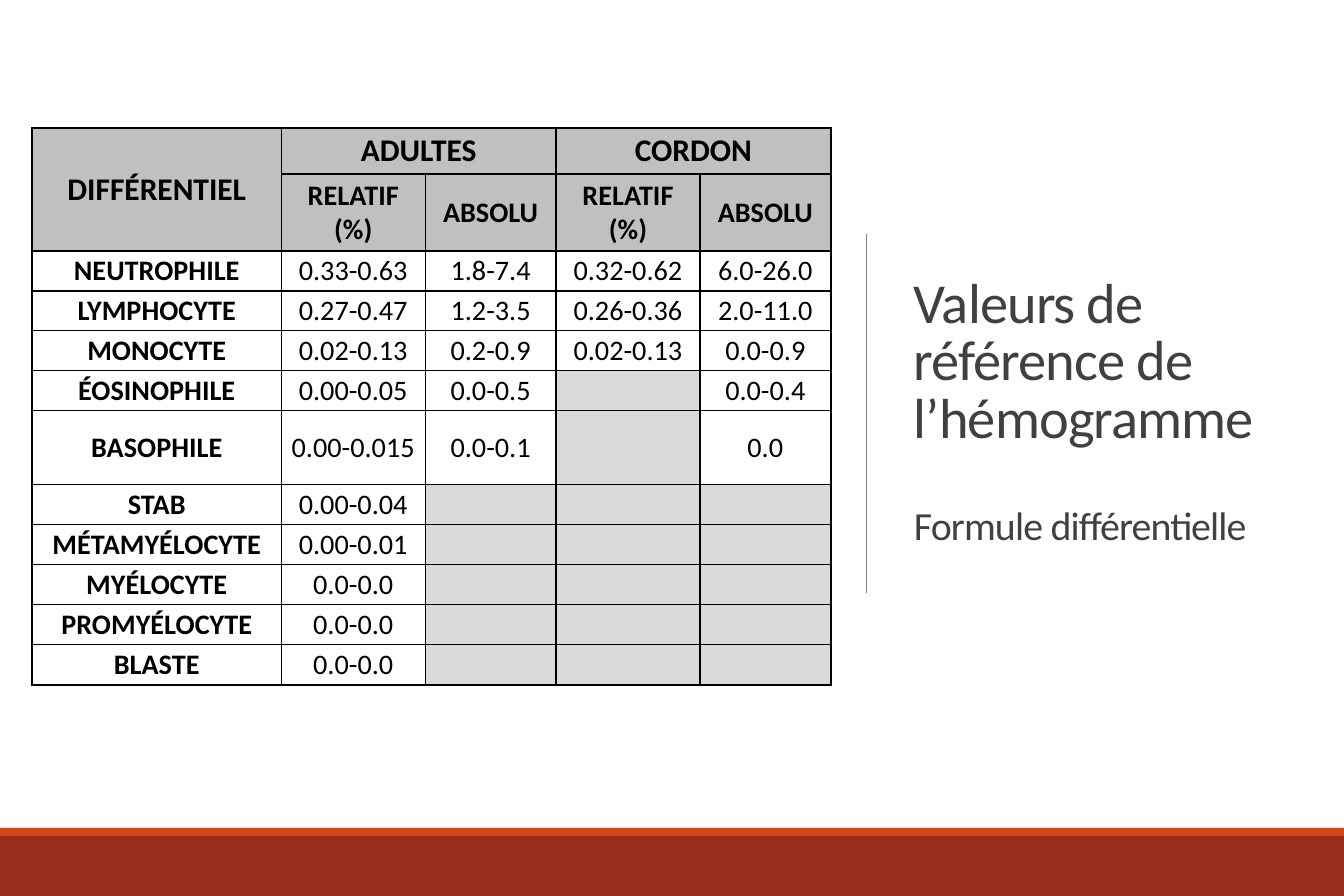
import dataclasses

import lxml.etree
import pptx
import pptx.dml.color
import pptx.enum.shapes
import pptx.enum.text
import pptx.oxml
import pptx.oxml.ns
import pptx.util

SCALE = 4572


@dataclasses.dataclass(frozen=True)
class Theme:
    """Colours, font and type sizes of the deck."""
    font: str = "Calibri"
    ink: str = "000000"
    title: str = "404040"
    rule: str = "808080"
    accent: str = "D34817"
    footer: str = "9B2D1F"
    header: str = "C0C0C0"
    paper: str = "FFFFFF"
    unused: str = "D9D9D9"
    title_size: int = 34
    subtitle_size: int = 24
    group_size: int = 19
    cell_size: int = 17
    thin: float = 1
    heavy: float = 1.5


THEME = Theme()
HEADERS = [
    ["DIFFÉRENTIEL", "ADULTES", "", "CORDON", ""],
    ["", "RELATIF (%)", "ABSOLU", "RELATIF (%)", "ABSOLU"],
]
VALUES = [
    ["NEUTROPHILE", "0.33-0.63", "1.8-7.4", "0.32-0.62", "6.0-26.0"],
    ["LYMPHOCYTE", "0.27-0.47", "1.2-3.5", "0.26-0.36", "2.0-11.0"],
    ["MONOCYTE", "0.02-0.13", "0.2-0.9", "0.02-0.13", "0.0-0.9"],
    ["ÉOSINOPHILE", "0.00-0.05", "0.0-0.5", "", "0.0-0.4"],
    ["BASOPHILE", "0.00-0.015", "0.0-0.1", "", "0.0"],
    ["STAB", "0.00-0.04", "", "", ""],
    ["MÉTAMYÉLOCYTE", "0.00-0.01", "", "", ""],
    ["MYÉLOCYTE", "0.0-0.0", "", "", ""],
    ["PROMYÉLOCYTE", "0.0-0.0", "", "", ""],
    ["BLASTE", "0.0-0.0", "", "", ""],
]
COLUMN_WIDTHS = [417, 241, 219, 241, 219]
ROW_HEIGHTS = [78, 128] + [67] * 4 + [124] + [67] * 5


def px(length):
    """Turn px into EMU."""
    return pptx.util.Emu(length * SCALE)


def colour(code):
    """Return the colour of a hex code."""
    return pptx.dml.color.RGBColor.from_string(code)


def format_span(span, size, code, bold=False):
    """Give a run its font, size, colour and weight."""
    span.font.name = THEME.font
    span.font.size = pptx.util.Pt(size)
    span.font.color.rgb = colour(code)
    span.font.bold = bold


def draw_borders(cell, row, column):
    """Draw the four sides of a cell, heavier on the outer frame and below the groups."""
    bottom = row + cell.span_height
    right = column + cell.span_width
    heavy_rows = {0, len(ROW_HEIGHTS)} | ({1} if column else set())
    heavy_columns = {0, len(COLUMN_WIDTHS)}
    sides = {
        "lnL": column in heavy_columns,
        "lnR": right in heavy_columns,
        "lnT": row in heavy_rows,
        "lnB": bottom in heavy_rows,
    }
    properties = cell._tc.get_or_add_tcPr()
    for tag, heavy in sides.items():
        width = pptx.util.Pt(THEME.heavy if heavy else THEME.thin)
        properties.append(pptx.oxml.parse_xml(
            f'<a:{tag} {pptx.oxml.ns.nsdecls("a")} w="{width}"><a:solidFill>'
            f'<a:srgbClr val="{THEME.ink}"/></a:solidFill></a:{tag}>'))


def fill_cell(cell, text, row, column):
    """Write and style one cell of the table."""
    in_header = row < len(HEADERS)
    draw_borders(cell, row, column)
    cell.fill.solid()
    cell.fill.fore_color.rgb = colour(
        THEME.header if in_header else THEME.paper if text else THEME.unused)
    cell.margin_left = cell.margin_right = px(14)
    cell.margin_top = cell.margin_bottom = 0
    cell.vertical_anchor = pptx.enum.text.MSO_ANCHOR.MIDDLE
    if text:
        para = cell.text_frame.paragraphs[0]
        para.text = text
        para.alignment = pptx.enum.text.PP_ALIGN.CENTER
        size = THEME.group_size if row == 0 else THEME.cell_size
        format_span(para.runs[0], size, THEME.ink, in_header or column == 0)


def add_values(page, left, top):
    """Add the table of reference values with its corner at left, top."""
    rows = HEADERS + VALUES
    frame = page.shapes.add_table(
        len(rows), len(COLUMN_WIDTHS), px(left), px(top),
        px(sum(COLUMN_WIDTHS)), px(sum(ROW_HEIGHTS)))
    table = frame.table
    table.first_row = table.horz_banding = False
    for column, width in zip(table.columns, COLUMN_WIDTHS):
        column.width = px(width)
    for row, height in zip(table.rows, ROW_HEIGHTS):
        row.height = px(height)
    table.cell(0, 0).merge(table.cell(1, 0))
    for column in (1, 3):
        table.cell(0, column).merge(table.cell(0, column + 1))
    for row, texts in enumerate(rows):
        for column, text in enumerate(texts):
            fill_cell(table.cell(row, column), text, row, column)


def add_heading(page, left, top, width, height):
    """Place the title in its box, with a rule to its left."""
    box = page.shapes.title
    box.left, box.top, box.width, box.height = map(px, (left, top, width, height))
    frame = box.text_frame
    frame.text = "Valeurs de référence de l’hémogramme\nFormule différentielle"
    frame.word_wrap = True
    frame.auto_size = pptx.enum.text.MSO_AUTO_SIZE.NONE
    frame.vertical_anchor = pptx.enum.text.MSO_ANCHOR.MIDDLE
    for para, size in zip(frame.paragraphs, (THEME.title_size, THEME.subtitle_size)):
        para.alignment = pptx.enum.text.PP_ALIGN.LEFT
        para.line_spacing = 0.85
        para.space_before = pptx.util.Pt(0)
        format_span(para.runs[0], size, THEME.title)
        para.runs[0].font._element.set("spc", "-50")
    frame.paragraphs[1].space_before = pptx.util.Pt(35)

    rule = page.shapes.add_connector(
        pptx.enum.shapes.MSO_CONNECTOR.STRAIGHT,
        px(left - 60), px(top + 254), px(left - 60), px(top + 854))
    rule.line.color.rgb = colour(THEME.rule)
    rule.line.width = pptx.util.Pt(0.5)
    lxml.etree.SubElement(rule._element.spPr, pptx.oxml.ns.qn("a:effectLst"))


def add_footer(page, left, top, width, height):
    """Stack the thin accent band and the footer band in the given box."""
    accent_height = 14
    bands = [
        (top, accent_height, THEME.accent),
        (top + accent_height, height - accent_height, THEME.footer),
    ]
    for band_top, band_height, code in bands:
        band = page.shapes.add_shape(
            pptx.enum.shapes.MSO_SHAPE.RECTANGLE,
            px(left), px(band_top), px(width), px(band_height))
        band.shadow.inherit = False
        band.fill.solid()
        band.fill.fore_color.rgb = colour(code)
        band.line.fill.background()


def main():
    """Build the slide and save the deck."""
    deck = pptx.Presentation()
    deck.slide_width, deck.slide_height = px(2250), px(1500)
    page = deck.slides.add_slide(deck.slide_layouts[5])
    page.background.fill.solid()
    page.background.fill.fore_color.rgb = colour(THEME.paper)
    add_heading(page, 1510, 138, 622, 1106)
    add_footer(page, 0, 1386, 2250, 114)
    add_values(page, 54, 214)
    deck.save("out.pptx")


if __name__ == "__main__":
    main()
